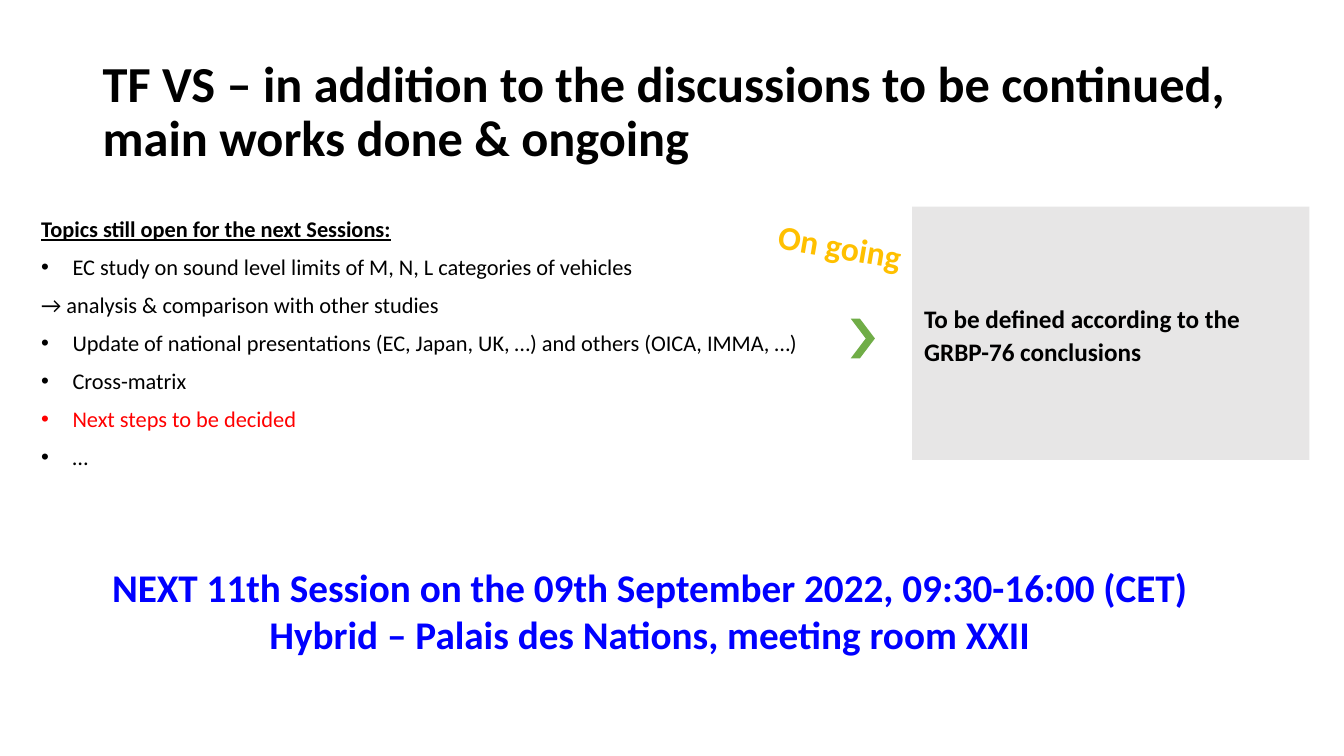
"""Build the task force slide on open topics and the next session."""
from lxml import etree
from pptx import Presentation
from pptx.dml.color import RGBColor
from pptx.enum.shapes import MSO_SHAPE
from pptx.enum.text import MSO_ANCHOR, PP_ALIGN
from pptx.oxml.ns import qn
from pptx.util import Cm, Pt

RECT, CHEVRON = MSO_SHAPE.RECTANGLE, MSO_SHAPE.CHEVRON
TOP, MIDDLE = MSO_ANCHOR.TOP, MSO_ANCHOR.MIDDLE
LEFT, CENTER = PP_ALIGN.LEFT, PP_ALIGN.CENTER

TITLE = ["TF VS – in addition to the discussions to be continued, main works done & ongoing"]
TOPICS = [
    ("head", "Topics still open for the next Sessions:"),
    ("bullet", "EC study on sound level limits of M, N, L categories of vehicles"),
    ("plain", "→ analysis & comparison with other studies"),
    ("bullet", "Update of national presentations (EC, Japan, UK, …) and others (OICA, IMMA, …)"),
    ("bullet", "Cross-matrix"),
    ("alert", "Next steps to be decided"),
    ("bullet", "…"),
]
RESULT = ["To be defined according to the GRBP-76 conclusions"]
SESSION = [
    "NEXT 11th Session on the 09th September 2022, 09:30-16:00 (CET)",
    "Hybrid – Palais des Nations, meeting room XXII",
]
STATUS = ["On going"]

THEME = {
    "font": "Calibri",
    "color": {"text": "000000", "alert": "FF0000", "date": "0000FF",
              "status": "FFC000", "panel": "E7E6E6", "arrow": "70AD47"},
    "size": {"title": 36, "topic": 16, "result": 18, "date": 28, "status": 24},
}
AREA = {
    "title": (2.34, 1.02, 29.21, 3.68),
    "arrow": (21.44, 8.03, 0.61, 1),
    "topics": (1.04, 4.32, 19.63, 8.56),
    "panel": (22.99, 5.21, 10.01, 6.38),
    "session": (2.16, 14.07, 28.42, 2.64),
    "status": (18.87, 5.56, 4.6, 1.27),
}
INDENT = Cm(0.79)


def place(name):
    return [Cm(n) for n in AREA[name]]


def tint(name):
    return RGBColor.from_string(THEME["color"][name])


def add_form(slide, kind, name):
    form = slide.shapes.add_shape(kind, *place(name))
    form.shadow.inherit = False
    form.fill.solid()
    form.fill.fore_color.rgb = tint(name)
    form.line.fill.background()
    return form


def add_bullet(para):
    props = para._p.get_or_add_pPr()
    props.set("marL", str(INDENT))
    props.set("indent", str(-INDENT))
    etree.SubElement(props, qn("a:buFont")).set("typeface", "Arial")
    etree.SubElement(props, qn("a:buChar")).set("char", "•")


def write(box, lines, size, color="text", anchor=TOP, align=LEFT, space=1, before=0, pad=(0.25, 0.13)):
    frame = box.text_frame
    frame.word_wrap = True
    frame.vertical_anchor = anchor
    frame.margin_left = frame.margin_right = Cm(pad[0])
    frame.margin_top = frame.margin_bottom = Cm(pad[1])
    frame.text = "\n".join(lines)
    for i, para in enumerate(frame.paragraphs):
        para.alignment = align
        para.line_spacing = space
        para.space_before = Pt(before if i else 0)
        for run in para.runs:
            run.font.name = THEME["font"]
            run.font.size = Pt(THEME["size"][size])
            run.font.bold = True
            run.font.color.rgb = tint(color)
    return frame.paragraphs


def add_topics(slide):
    box = slide.shapes.add_textbox(*place("topics"))
    paras = write(box, [text for _, text in TOPICS], "topic",
                  anchor=MIDDLE, space=1.1, before=6, pad=(0, 0))
    for para, (kind, _) in zip(paras, TOPICS):
        if kind in ("bullet", "alert"):
            add_bullet(para)
        font = para.runs[0].font
        font.bold = font.underline = kind == "head"
        if kind == "alert":
            font.color.rgb = tint("alert")


def main():
    deck = Presentation()
    deck.slide_width, deck.slide_height = Cm(33.87), Cm(19.05)
    slide = deck.slides.add_slide(deck.slide_layouts[6])

    title = slide.shapes.add_textbox(*place("title"))
    write(title, TITLE, "title", anchor=MIDDLE, space=0.9)

    arrow = add_form(slide, CHEVRON, "arrow")
    arrow.adjustments[0] = 0.62
    add_topics(slide)

    panel = add_form(slide, RECT, "panel")
    write(panel, RESULT, "result", anchor=MIDDLE, space=1.1, pad=(0.3, 0.2))

    session = slide.shapes.add_textbox(*place("session"))
    write(session, SESSION, "date", "date", align=CENTER)

    status = slide.shapes.add_textbox(*place("status"))
    write(status, STATUS, "status", "status", align=CENTER)
    status.rotation = 9.8

    deck.save("out.pptx")


if __name__ == "__main__":
    main()
